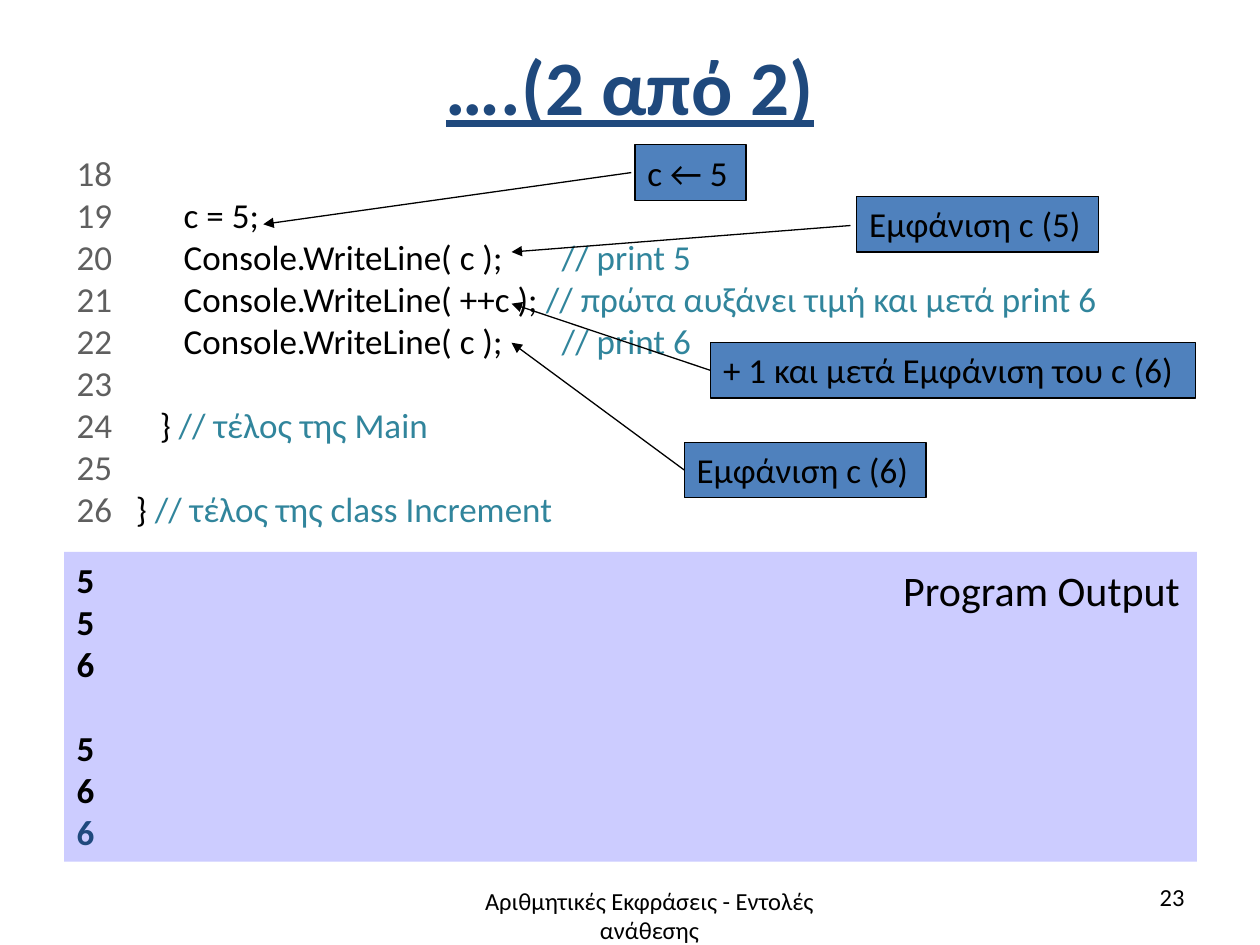
from lxml import etree
from pptx import Presentation, util as u
from pptx.dml.color import RGBColor
from pptx.enum import shapes, text
from pptx.oxml.ns import qn

COLORS = {"navy": "1F497D", "number": "5F5F5F", "code": "000000", "comment": "31859C",
          "output": "CCCCFF", "callout": "4F81BD"}
FONT = "Calibri"
COMMENT_STOP = 3.57

CODE = [
    (18, 0, "", ""),
    (19, 0.85, "c = 5;", ""),
    (20, 0.85, "Console.WriteLine( c );\t", "// print 5"),
    (21, 0.85, "Console.WriteLine( ++c ); ", "// πρώτα αυξάνει τιμή και μετά print 6"),
    (22, 0.85, "Console.WriteLine( c );\t", "// print 6"),
    (23, 0, "", ""),
    (24, 0.66, "} ", "// τέλος της Main"),
    (25, 0, "", ""),
    (26, 0.47, "} ", "// τέλος της class Increment"),
]
OUTPUT_GROUPS = [["5", "5", "6"], ["5", "6", "6"]]
CALLOUTS = [
    ("c ← 5", (5.04, 1.15, 0.88), (5.01, 1.37), (2.09, 1.78)),
    ("Εμφάνιση c (5)", (6.8, 1.56, 1.92), (6.75, 1.79), (4.06, 2)),
    ("+ 1 και μετά Εμφάνιση του c (6)", (5.64, 2.72, 3.85), (5.64, 2.94), (4.06, 2.41)),
    ("Εμφάνιση c (6)", (5.43, 3.51, 1.92), (5.43, 3.73), (4.06, 2.72)),
]
CALLOUT_HEIGHT = 0.44


def rgb(name):
    return RGBColor.from_string(COLORS[name])


def inches(*lengths):
    return [u.Inches(length) for length in lengths]


def style(paragraph, size, color="code", bold=False, align=text.PP_ALIGN.LEFT):
    paragraph.alignment = align
    font = paragraph.font
    font.name, font.size, font.bold = FONT, u.Pt(size), bold
    font.color.rgb = rgb(color)


def add_label(slide, words, box, size, wrap=True, **look):
    label = slide.shapes.add_textbox(*inches(*box))
    label.text_frame.word_wrap = wrap
    label.text_frame.text = words
    style(label.text_frame.paragraphs[0], size, **look)
    return label


def add_panel(slide, box, color):
    panel = slide.shapes.add_shape(shapes.MSO_SHAPE.RECTANGLE, *inches(*box))
    panel.shadow.inherit = False
    panel.fill.solid()
    panel.fill.fore_color.rgb = rgb(color)
    panel.line.fill.background()
    panel.text_frame.vertical_anchor = text.MSO_ANCHOR.TOP
    return panel


def next_paragraph(frame, index):
    return frame.add_paragraph() if index else frame.paragraphs[0]


def add_code(slide):
    listing = slide.shapes.add_textbox(*inches(0.51, 1.15, 8.99, 3.13))
    listing.text_frame.word_wrap = True
    for index, (number, indent, statement, comment) in enumerate(CODE):
        line = next_paragraph(listing.text_frame, index)
        style(line, 20)
        if indent:
            props = line._p.get_or_add_pPr()
            props.set("marL", str(u.Inches(indent)))
            props.set("indent", str(-u.Inches(indent)))
            stops = etree.Element(qn("a:tabLst"))
            for stop in (indent, COMMENT_STOP):
                etree.SubElement(stops, qn("a:tab"), pos=str(u.Inches(stop)), algn="l")
            props.insert(0, stops)
        label = f"{number}\t" if indent else str(number)
        for words, color in ((label, "number"), (statement, "code"), (comment, "comment")):
            if words:
                run = line.add_run()
                run.text = words
                run.font.color.rgb = rgb(color)


def add_output(slide):
    panel = add_panel(slide, (0.51, 4.38, 8.99, 2.46), "output")
    rows = [(value, group > 0 and place == 0)
            for group, values in enumerate(OUTPUT_GROUPS)
            for place, value in enumerate(values)]
    for index, (value, starts_group) in enumerate(rows):
        line = next_paragraph(panel.text_frame, index)
        line.text = value
        style(line, 20, "navy" if index == len(rows) - 1 else "code", bold=True)
        if starts_group:
            line.space_before = u.Pt(24)
    add_label(slide, "Program Output", (7.07, 4.43, 2.42, 0.5), 24, wrap=False)


def add_callout(slide, words, place, start, end):
    callout = add_panel(slide, (*place, CALLOUT_HEIGHT), "callout")
    callout.line.color.rgb = rgb("code")
    callout.line.width = u.Pt(0.75)
    callout.text_frame.word_wrap = False
    callout.text_frame.text = words
    style(callout.text_frame.paragraphs[0], 20)

    arrow = slide.shapes.add_connector(shapes.MSO_CONNECTOR.STRAIGHT, *inches(*start, *end))
    arrow.line.color.rgb = rgb("code")
    arrow.line.width = u.Pt(0.75)
    etree.SubElement(arrow.line._get_or_add_ln(), qn("a:tailEnd"), type="triangle")
    etree.SubElement(arrow._element.spPr, qn("a:effectLst"))


def main():
    deck = Presentation()
    deck.slide_width, deck.slide_height = inches(10, 7.5)
    slide = deck.slides.add_slide(deck.slide_layouts[6])

    title = add_label(slide, "….(2 από 2)", (0.5, 0.05, 9, 1.25), 44,
                      color="navy", bold=True, align=text.PP_ALIGN.CENTER)
    title.text_frame.vertical_anchor = text.MSO_ANCHOR.MIDDLE
    title.text_frame.paragraphs[0].font.underline = True

    add_code(slide)
    add_output(slide)
    for callout in CALLOUTS:
        add_callout(slide, *callout)

    add_label(slide, "Αριθμητικές Εκφράσεις - Εντολές ανάθεσης", (3.41, 6.98, 3.49, 0.55), 14,
              align=text.PP_ALIGN.CENTER)
    add_label(slide, "23", (7.17, 6.95, 2.33, 0.4), 14, align=text.PP_ALIGN.RIGHT)
    deck.save("out.pptx")


if __name__ == "__main__":
    main()
